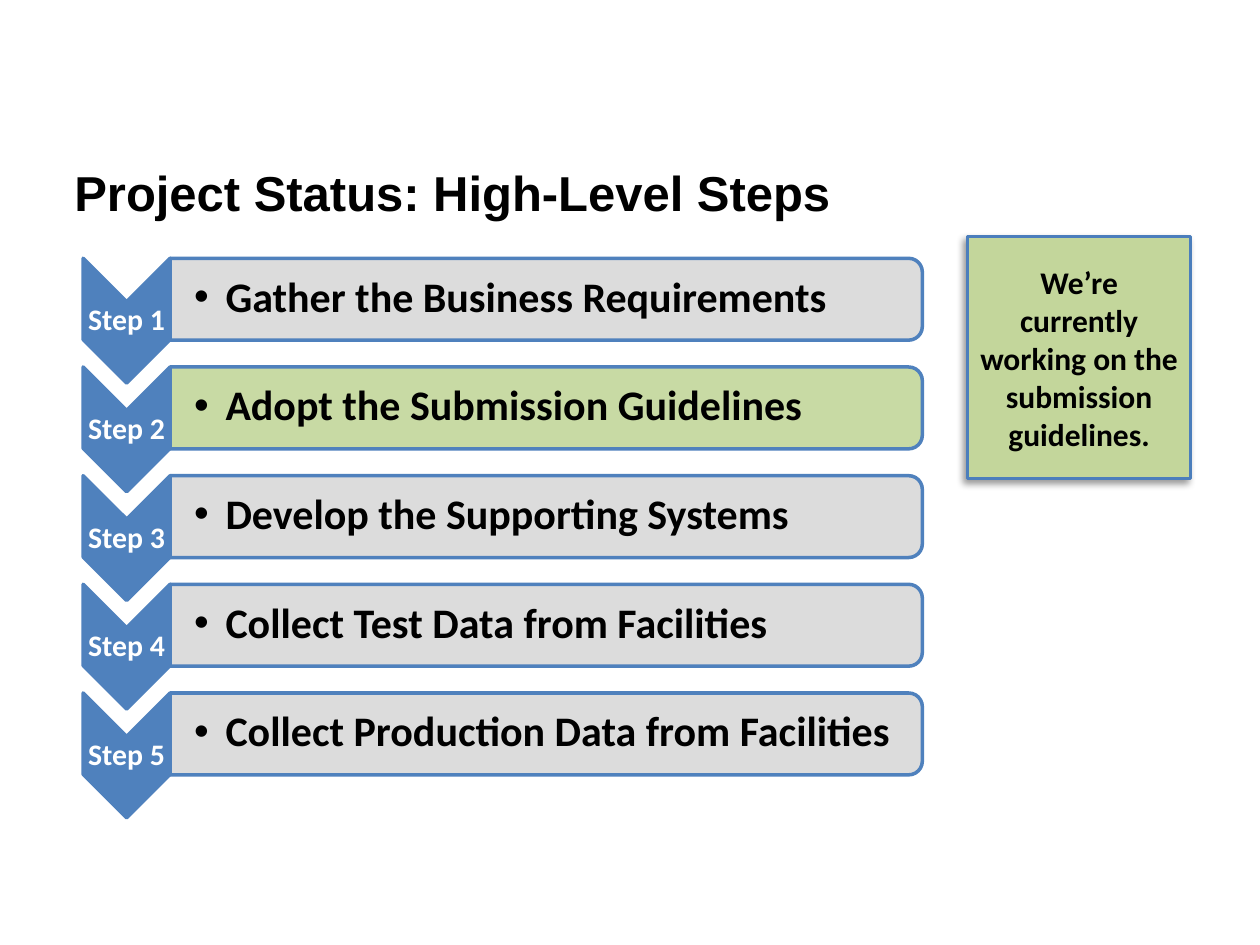
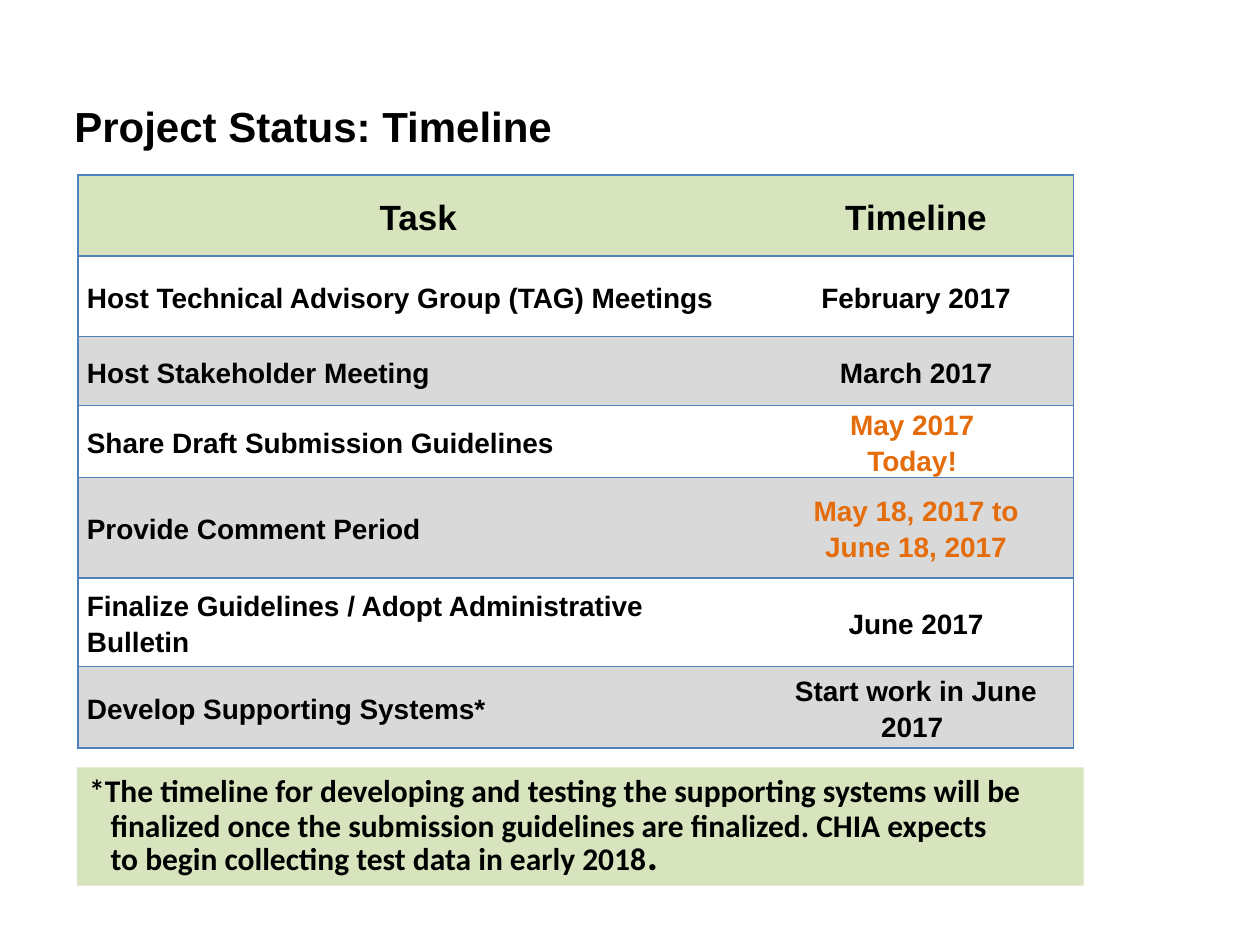
"""Build two project status slides: the high-level steps and the timeline."""
from dataclasses import dataclass

from lxml import etree
from pptx import Presentation
from pptx.dml.color import RGBColor
from pptx.enum.shapes import MSO_SHAPE
from pptx.enum.text import MSO_ANCHOR, MSO_AUTO_SIZE, PP_ALIGN
from pptx.oxml.ns import qn
from pptx.util import Inches, Pt

LEFT, MID = PP_ALIGN.LEFT, PP_ALIGN.CENTER
TOP, CENTER = MSO_ANCHOR.TOP, MSO_ANCHOR.MIDDLE
CHEVRON, RECT = MSO_SHAPE.CHEVRON, MSO_SHAPE.RECTANGLE
ROUND = MSO_SHAPE.ROUND_2_SAME_RECTANGLE
NO_FIT = MSO_AUTO_SIZE.NONE

COLORS = {
    "black": "000000",
    "white": "FFFFFF",
    "blue": "4F81BD",
    "edge": "4B7EBC",
    "grey": "D9D9D9",
    "green": "C3D69B",
    "pale": "D7E4BD",
    "orange": "E46C0A",
}

STEP_TOP = 2.08
STEP_GAP = 3.45 / 4
ROW_TALL = (0.64, 0.64, 0.55, 0.55, 0.8, 0.7, 0.65)
COL_WIDE = (5.4, 2.5)


@dataclass(frozen=True)
class Box:
    """Place and size in inches."""
    left: float
    top: float
    width: float
    height: float

    def lengths(self) -> tuple:
        """Give the four values as lengths."""
        return tuple(map(Inches, (self.left, self.top, self.width, self.height)))

    def turned(self) -> "Box":
        """Give the box that covers this one after a quarter turn."""
        shift = (self.width - self.height) / 2
        return Box(self.left + shift, self.top - shift, self.height, self.width)


@dataclass(frozen=True)
class Style:
    """Look of a paragraph."""
    size: float
    face: str = "Calibri"
    color: str = "black"
    align: PP_ALIGN = LEFT
    space: object = None
    mark: str = ""


@dataclass(frozen=True)
class Step:
    """One step of the project."""
    text: str
    fill: str = "grey"


@dataclass(frozen=True)
class Task:
    """One row of the timeline."""
    name: str
    date: str
    color: str = "black"


STEPS = (
    Step("Gather the Business Requirements"),
    Step("Adopt the Submission Guidelines", "green"),
    Step("Develop the Supporting Systems"),
    Step("Collect Test Data from Facilities"),
    Step("Collect Production Data from Facilities"),
)
TASKS = (
    Task("Host Technical Advisory Group (TAG) Meetings", "February 2017"),
    Task("Host Stakeholder Meeting", "March 2017"),
    Task("Share Draft Submission Guidelines", "May 2017 \nToday! ", "orange"),
    Task("Provide Comment Period", "May 18, 2017 to\nJune 18, 2017", "orange"),
    Task("Finalize Guidelines / Adopt Administrative Bulletin", "June 2017"),
    Task("Develop Supporting Systems*", "Start work in June 2017 "),
)
NOTE = (
    "*The timeline for developing and testing the supporting systems will be\n"
    "finalized once the submission guidelines are finalized. CHIA expects\n"
    "to begin collecting test data in early 2018"
)


def rgb(name: str) -> RGBColor:
    """Look up a colour."""
    return RGBColor.from_string(COLORS[name])


def set_font(font, style: Style) -> None:
    """Apply a style to a font."""
    font.name, font.size, font.bold = style.face, Pt(style.size), True
    font.color.rgb = rgb(style.color)


def indent(para, left: float, first: float = 0) -> None:
    """Indent a paragraph."""
    props = para._p.get_or_add_pPr()
    props.set("marL", str(Inches(left)))
    props.set("indent", str(Inches(first)))


def add_mark(para, mark: str) -> None:
    """Give a paragraph a hanging bullet."""
    indent(para, 0.25, -0.25)
    props = para._p.get_or_add_pPr()
    etree.SubElement(props, qn("a:buFont"), typeface="Arial")
    etree.SubElement(props, qn("a:buChar"), char=mark)


def write(frame, text: str, style: Style) -> None:
    """Fill a text frame, one paragraph a line."""
    frame.text = text
    for para in frame.paragraphs:
        if style.mark:
            add_mark(para, style.mark)
        para.alignment = style.align
        para.line_spacing = style.space
        set_font(para.font, style)


def add_shape(slide, kind, box: Box, fill: str, line: str = "", width: float = 2):
    """Draw a flat preset shape."""
    shape = slide.shapes.add_shape(kind, *box.lengths())
    shape.shadow.inherit = False
    shape.fill.solid()
    shape.fill.fore_color.rgb = rgb(fill)
    if line:
        shape.line.color.rgb = rgb(line)
        shape.line.width = Pt(width)
    else:
        shape.line.fill.background()
    return shape


def add_text(slide, box: Box, pad: float, left: float):
    """Add an empty text box with middle anchor and give its frame."""
    frame = slide.shapes.add_textbox(*box.lengths()).text_frame
    frame.word_wrap = True
    frame.vertical_anchor = CENTER
    frame.margin_top = frame.margin_bottom = frame.margin_right = Inches(pad)
    frame.margin_left = Inches(left)
    return frame


def add_slide(deck, title: str, box: Box, size: float):
    """Add a slide with a bold title at the left."""
    slide = deck.slides.add_slide(deck.slide_layouts[5])
    head = slide.shapes.title
    head.left, head.top, head.width, head.height = box.lengths()
    frame = head.text_frame
    frame.auto_size = NO_FIT
    frame.vertical_anchor = CENTER
    write(frame, title, Style(size, "Arial"))
    return slide


def fade(shape, share: int) -> None:
    """Set the opacity of a solid fill in percent."""
    color = shape._element.spPr.find(qn("a:solidFill"))[0]
    etree.SubElement(color, qn("a:alpha"), val=str(share * 1000))


def cast(shape) -> None:
    """Give a shape a soft shadow to the lower left."""
    effects = shape._element.spPr.find(qn("a:effectLst"))
    shade = etree.SubElement(effects, qn("a:outerShdw"), blurRad=str(Pt(4)),
                             dist=str(Pt(3)), dir=str(135 * 60000), rotWithShape="0")
    color = etree.SubElement(shade, qn("a:srgbClr"), val=COLORS["black"])
    etree.SubElement(color, qn("a:alpha"), val="40000")


def add_step(slide, index: int, step: Step) -> None:
    """Draw a chevron with its label and the bar beside it."""
    top = STEP_TOP + index * STEP_GAP
    arrow = add_shape(slide, CHEVRON, Box(0.66, top - 0.03, 0.69, 0.99).turned(),
                      "blue", "blue")
    arrow.rotation = 90
    label = add_text(slide, Box(0.66, top + 0.32, 0.69, 0.3), 0.01, 0.01)
    write(label, f"Step {index + 1}", Style(17, color="white", align=MID, space=0.9))
    bar = add_shape(slide, ROUND, Box(1.35, top - 0.03, 5.97, 0.65).turned(),
                    step.fill, "blue")
    bar.rotation = 90
    fade(bar, 90)
    frame = add_text(slide, Box(1.35, top, 5.94, 0.58), 0.02, 0.19)
    write(frame, step.text, Style(24, space=0.9, mark="•"))


def set_edges(cell, open_side: str) -> None:
    """Rule the sides of a cell except the open one."""
    props = cell._tc.get_or_add_tcPr()
    for place, side in enumerate("LRTB"):
        line = etree.Element(qn(f"a:ln{side}"), w=str(Pt(1)))
        if side == open_side:
            etree.SubElement(line, qn("a:noFill"))
        else:
            fill = etree.SubElement(line, qn("a:solidFill"))
            etree.SubElement(fill, qn("a:srgbClr"), val=COLORS["blue"])
        props.insert(place, line)


def fill_cell(cell, text: str, style: Style, fill: str, open_side: str) -> None:
    """Write and colour one cell."""
    cell.margin_left = cell.margin_right = Inches(0.07)
    cell.margin_top = cell.margin_bottom = 0
    cell.vertical_anchor = CENTER
    write(cell.text_frame, text, style)
    cell.fill.solid()
    cell.fill.fore_color.rgb = rgb(fill)
    set_edges(cell, open_side)


def add_plan(slide) -> None:
    """Draw the table of tasks and dates."""
    box = Box(0.62, 1.39, sum(COL_WIDE), sum(ROW_TALL))
    table = slide.shapes.add_table(len(ROW_TALL), 2, *box.lengths()).table
    table.first_row = table.horz_banding = False
    for col, width in zip(table.columns, COL_WIDE):
        col.width = Inches(width)
    for row, height in zip(table.rows, ROW_TALL):
        row.height = Inches(height)
    for index, task in enumerate((Task("Task", "Timeline"),) + TASKS):
        size = 16 if index else 20
        fill = ("grey", "white")[index % 2] if index else "pale"
        name = Style(size, "Arial", align=LEFT if index else MID, space=1.15)
        date = Style(size, "Arial", task.color, MID, 1.15)
        fill_cell(table.cell(index, 0), task.name, name, fill, "R")
        fill_cell(table.cell(index, 1), task.date, date, fill, "L")


def draw_steps(deck) -> None:
    """Build the slide of high-level steps."""
    slide = add_slide(deck, "Project Status: High-Level Steps",
                      Box(0.49, 1.17, 8.79, 0.7), 28)
    for index, step in enumerate(STEPS):
        add_step(slide, index, step)
    card = add_shape(slide, RECT, Box(7.68, 1.88, 1.77, 1.92), "green", "edge", 1.75)
    cast(card)
    write(card.text_frame, "We’re currently working on the submission guidelines.",
          Style(18, align=MID))


def draw_plan(deck) -> None:
    """Build the slide of the timeline."""
    slide = add_slide(deck, "Project Status: Timeline",
                      Box(0.49, 0.49, 8.44, 1.01), 24)
    add_plan(slide)
    frame = add_shape(slide, RECT, Box(0.61, 6.09, 7.99, 0.94), "pale").text_frame
    frame.vertical_anchor = TOP
    style = Style(18, space=Pt(20))
    write(frame, NOTE, style)
    for para in frame.paragraphs[1:]:
        indent(para, 0.17)
    stop = frame.paragraphs[-1].add_run()
    stop.text = "."
    stop.font.size = Pt(24)


def main() -> None:
    """Build and save the deck."""
    deck = Presentation()
    deck.slide_width, deck.slide_height = Inches(10), Inches(7.5)
    draw_steps(deck)
    draw_plan(deck)
    deck.save("out.pptx")


if __name__ == "__main__":
    main()
